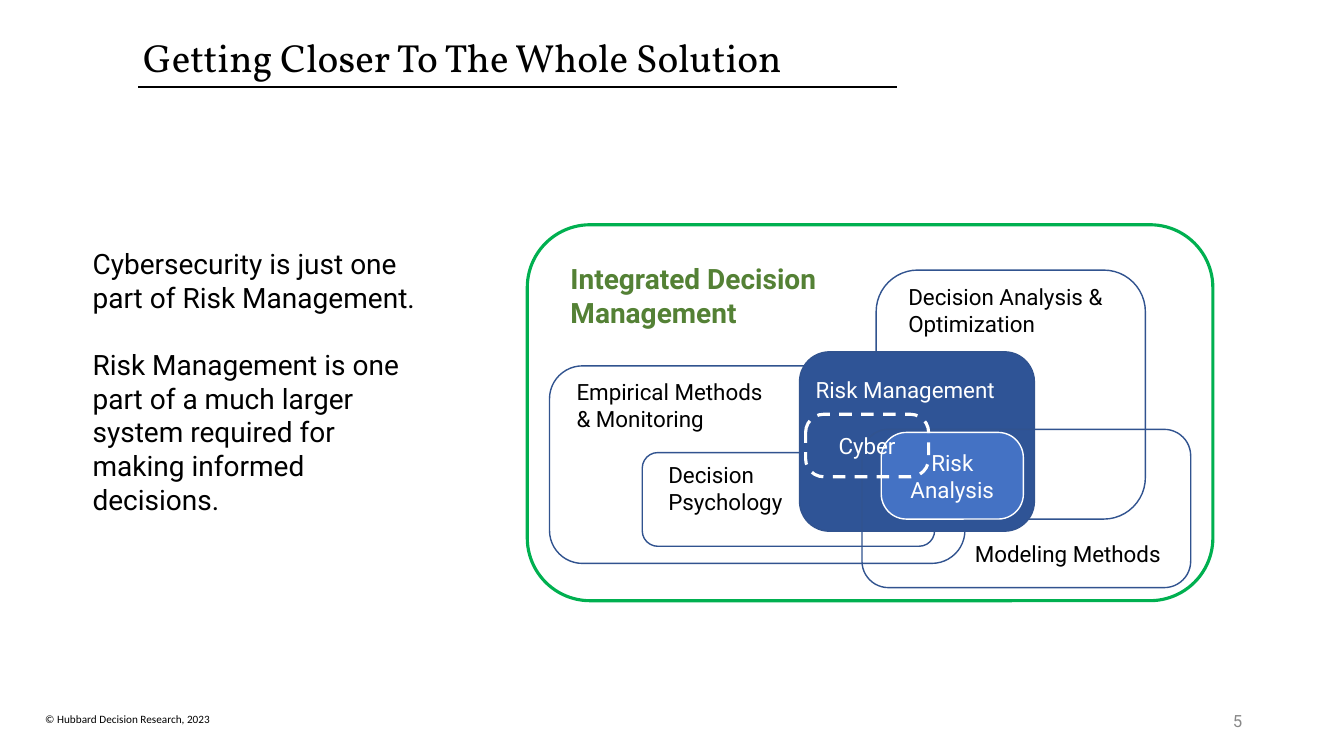
from dataclasses import dataclass
from pptx import Presentation
from pptx.dml.color import RGBColor
from pptx.enum.dml import MSO_LINE
from pptx.enum.shapes import MSO_CONNECTOR, MSO_SHAPE
from pptx.enum.text import MSO_ANCHOR, PP_ALIGN
from pptx.util import Pt
from lxml import etree

PX = 9144  # EMU per px, 100 px to the inch
SLIDE_SIZE = (1333, 750)


@dataclass(frozen=True)
class Theme:
    black: str = "000000"
    white: str = "FFFFFF"
    grey: str = "888888"
    heading_green: str = "548135"
    frame_green: str = "00B050"
    outline: str = "31538F"
    dark_blue: str = "2F5496"
    blue: str = "4472C4"
    title_font: str = "Vollkorn"
    body_font: str = "Roboto"
    footer_font: str = "Calibri"
    title_size: int = 28
    body_size: int = 20
    label_size: int = 16
    number_size: int = 12
    footer_size: int = 8
    thin: float = 1
    rule: float = 1.5
    thick: float = 2.25


THEME = Theme()

# Content: boxes are left, top, width, height in px
TITLE = ("Getting Closer To The Whole Solution", (132, 34, 815, 51))
TITLE_RULE = (137, 86, 890, 86)
COPYRIGHT = ("© Hubbard Decision Research, 2023", (35, 702, 250, 24))
SLIDE_NUMBER = ("5", (942, 695, 300, 40))
MESSAGE = (
    "Cybersecurity is just one part of Risk Management.\n"
    "Risk Management is one part of a much larger system required for "
    "making informed decisions.",
    (82, 240, 347, 357),
)
HEADING = ("Integrated Decision Management", (556, 255, 306, 77))

# Diagram, back to front: areas are (box, options), labels are (text, box, colour)
AREA, LABEL = "area", "label"
DIAGRAM = [
    (AREA, (637, 449, 290, 93), {}),
    (LABEL, "Decision Psychology", (653, 453, 145, 64), THEME.black),
    (LABEL, "Empirical Methods & Monitoring", (562, 370, 220, 64), THEME.black),
    (AREA, (545, 363, 412, 196), {}),
    (AREA, (523, 223, 680, 373), {"line": THEME.frame_green, "weight": THEME.thick}),
    (AREA, (869, 268, 267, 247), {}),
    (LABEL, "Decision Analysis & Optimization", (891, 276, 238, 64), THEME.black),
    (AREA, (793, 349, 233, 178), {"fill": THEME.dark_blue}),
    (AREA, (874, 429, 141, 86), {"fill": THEME.blue, "line": THEME.white,
                                 "corner": 0.29, "text": "Risk Analysis"}),
    (LABEL, "Risk Management", (799, 368, 238, 37), THEME.white),
    (AREA, (855, 426, 326, 157), {}),
    (LABEL, "Modeling Methods", (957, 531, 225, 37), THEME.black),
    (AREA, (799, 411, 122, 62), {"line": THEME.white, "weight": THEME.thick,
                                 "corner": 0.29, "dashed": True, "text": "Cyber"}),
]


def emu(lengths):
    return [length * PX for length in lengths]


def write(shape, text, size, colour=THEME.black, font=THEME.body_font, bold=False,
          align=PP_ALIGN.LEFT, anchor=MSO_ANCHOR.TOP):
    frame = shape.text_frame
    frame.text = text
    frame.word_wrap = True
    frame.vertical_anchor = anchor
    for paragraph in frame.paragraphs:
        paragraph.alignment = align
        for run in paragraph.runs:
            run.font.name = font
            run.font.size = Pt(size)
            run.font.bold = bold
            run.font.color.rgb = RGBColor.from_string(colour)


def add_text(slide, text, box, size, **style):
    shape = slide.shapes.add_textbox(*emu(box))
    write(shape, text, size, **style)
    return shape


def add_area(slide, box, fill=None, line=THEME.outline, weight=THEME.thin,
             corner=0.167, dashed=False, text=None):
    shape = slide.shapes.add_shape(MSO_SHAPE.ROUNDED_RECTANGLE, *emu(box))
    shape.shadow.inherit = False
    shape.adjustments[0] = corner
    if fill:
        shape.fill.solid()
        shape.fill.fore_color.rgb = RGBColor.from_string(fill)
    else:
        shape.fill.background()
    shape.line.color.rgb = RGBColor.from_string(line)
    shape.line.width = Pt(weight)
    if dashed:
        shape.line.dash_style = MSO_LINE.DASH
    if text:
        write(shape, text, THEME.label_size, colour=THEME.white,
              align=PP_ALIGN.CENTER, anchor=MSO_ANCHOR.MIDDLE)


def add_rule(slide, ends):
    rule = slide.shapes.add_connector(MSO_CONNECTOR.STRAIGHT, *emu(ends))
    rule.line.color.rgb = RGBColor.from_string(THEME.black)
    rule.line.width = Pt(THEME.rule)
    properties = rule._element.spPr
    namespace = properties.nsmap["a"]
    etree.SubElement(properties, f"{{{namespace}}}effectLst")


def main():
    presentation = Presentation()
    presentation.slide_width, presentation.slide_height = emu(SLIDE_SIZE)
    slide = presentation.slides.add_slide(presentation.slide_layouts[5])

    # Title and its rule
    text, box = TITLE
    title = slide.shapes.title
    title.left, title.top, title.width, title.height = emu(box)
    write(title, text, THEME.title_size, font=THEME.title_font,
          anchor=MSO_ANCHOR.MIDDLE)
    title.text_frame.paragraphs[0].line_spacing = 0.9
    add_rule(slide, TITLE_RULE)

    # Message on the left
    message = add_text(slide, *MESSAGE, THEME.body_size)
    message.text_frame.paragraphs[1].space_before = Pt(24)

    # Overlapping areas
    add_text(slide, *HEADING, THEME.body_size, colour=THEME.heading_green, bold=True)
    for kind, *details in DIAGRAM:
        if kind == AREA:
            box, options = details
            add_area(slide, box, **options)
        else:
            text, box, colour = details
            add_text(slide, text, box, THEME.label_size, colour=colour)

    # Footer
    add_text(slide, *COPYRIGHT, THEME.footer_size, font=THEME.footer_font)
    add_text(slide, *SLIDE_NUMBER, THEME.number_size, colour=THEME.grey,
             align=PP_ALIGN.RIGHT, anchor=MSO_ANCHOR.MIDDLE)

    presentation.save("out.pptx")


if __name__ == "__main__":
    main()
